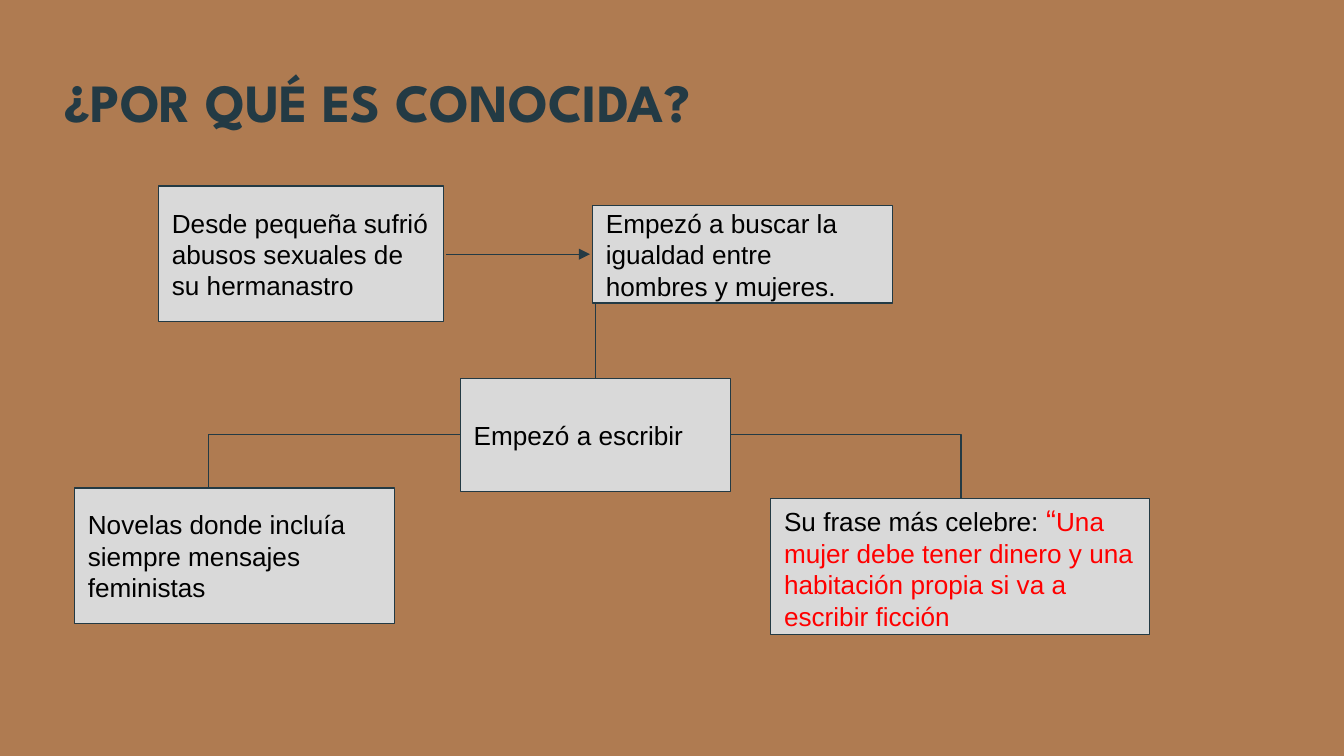
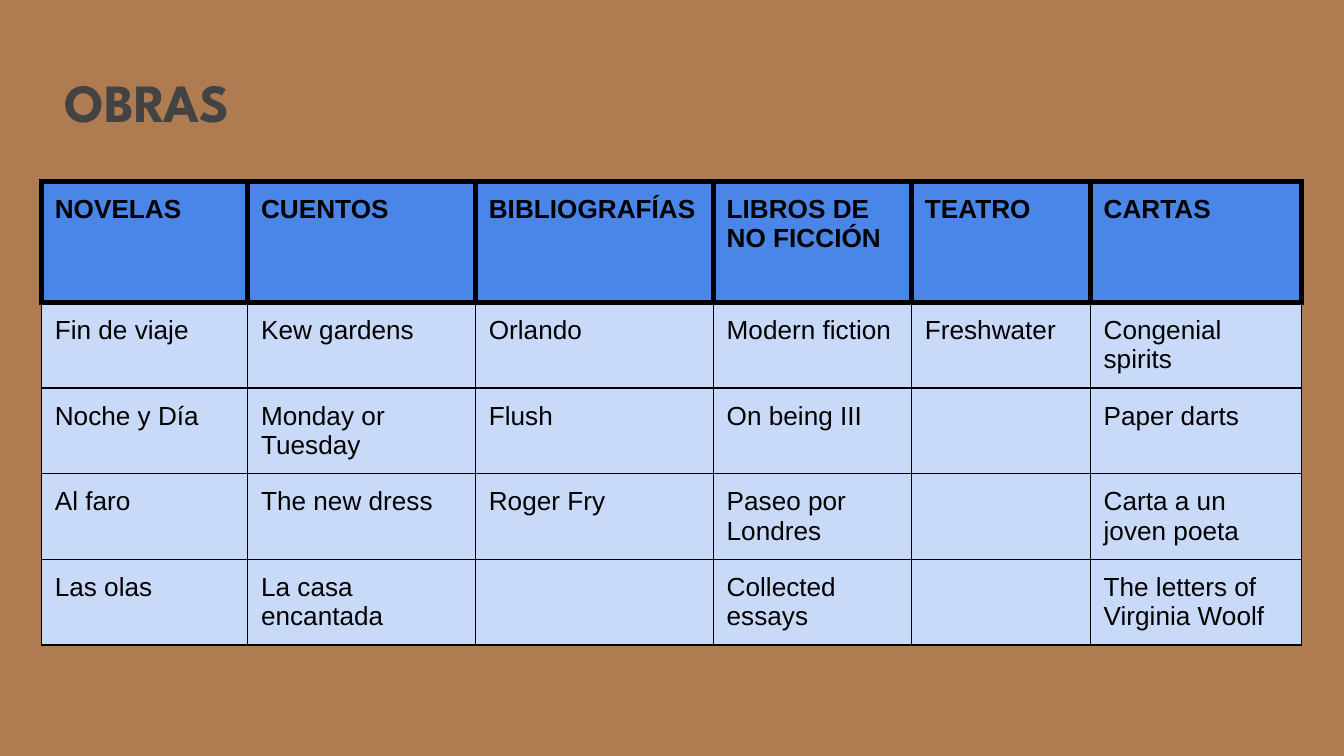
from dataclasses import dataclass
from typing import NamedTuple

from lxml import etree
from pptx import Presentation
from pptx.dml.color import RGBColor
from pptx.enum.shapes import MSO_CONNECTOR, MSO_SHAPE
from pptx.enum.text import MSO_ANCHOR, MSO_AUTO_SIZE, PP_ALIGN
from pptx.oxml.ns import qn
from pptx.util import Inches, Pt

RECTANGLE = MSO_SHAPE.RECTANGLE
STRAIGHT, ELBOW = MSO_CONNECTOR.STRAIGHT, MSO_CONNECTOR.ELBOW
MIDDLE, BOTTOM = MSO_ANCHOR.MIDDLE, MSO_ANCHOR.BOTTOM
LEFT = PP_ALIGN.LEFT
NO_AUTOFIT = MSO_AUTO_SIZE.NONE

WIDTH, HEIGHT = Inches(10), Inches(5.625)
COLUMN = WIDTH / 100
ROW = HEIGHT / 56.25
MARGIN = Inches(0.1)
TITLE_ONLY = 5
TITLE_FONT, BODY_FONT = "League Spartan", "Arial"
TITLE_SIZE, BODY_SIZE, QUOTE_SIZE = 28.8, 14, 16
THIN, THICK = 0.75, 3
COLORS = {
    "background": "AF7B51",
    "ink": "233A44",
    "gray": "434343",
    "box": "D9D9D9",
    "text": "000000",
    "quote": "FF0000",
    "header": "4A86E8",
    "cell": "C9DAF8",
}


class Area(NamedTuple):
    """A place on the grid, in columns and rows."""

    left: float
    top: float
    width: float
    height: float


class Phrase(NamedTuple):
    """A piece of text with its own colour and size."""

    text: str
    color: str = "text"
    size: float = BODY_SIZE


@dataclass(frozen=True)
class Box:
    """A box of the concept map."""

    area: Area
    phrases: tuple[Phrase, ...]


@dataclass(frozen=True)
class Link:
    """A line of the concept map; elbows run sideways, then down."""

    start: tuple[float, float]
    end: tuple[float, float]
    arrow: bool = False


BANDS = (Area(0, 0, 100, 56.25), Area(0, 51, 100, 5.25))
TITLE_AREA = Area(3.8, 3.65, 81, 7.3)
BOXES = (
    Box(Area(11.8, 13.85, 21.2, 10.1),
        (Phrase("Desde pequeña sufrió abusos sexuales de su hermanastro"),)),
    Box(Area(44.1, 15.3, 22.3, 7.25),
        (Phrase("Empezó a buscar la igualdad entre hombres y mujeres."),)),
    Box(Area(34.25, 28.15, 20.1, 8.45), (Phrase("Empezó a escribir"),)),
    Box(Area(57.35, 37.1, 28.2, 10.1),
        (Phrase("Su frase más celebre: "),
         Phrase("“", "quote", QUOTE_SIZE),
         Phrase("Una mujer debe tener dinero y una habitación propia si va a "
                "escribir ficción", "quote"))),
    Box(Area(5.55, 36.3, 23.8, 10.1),
        (Phrase("Novelas donde incluía siempre mensajes feministas"),)),
)
LINKS = (
    Link((33.2, 18.92), (43.9, 18.92), arrow=True),
    Link((53.1, 22.5), (44.3, 28.1)),
    Link((54.4, 32.35), (71.5, 37.1)),
    Link((34.3, 32.35), (15.5, 37.1)),
)
WORKS = (
    ("NOVELAS", "CUENTOS", "BIBLIOGRAFÍAS", "LIBROS DE NO FICCIÓN", "TEATRO", "CARTAS"),
    ("Fin de viaje", "Kew gardens", "Orlando", "Modern fiction", "Freshwater",
     "Congenial spirits"),
    ("Noche y Día", "Monday or Tuesday", "Flush", "On being III", "", "Paper darts"),
    ("Al faro", "The new dress", "Roger Fry", "Paseo por Londres", "",
     "Carta a un joven poeta"),
    ("Las olas", "La casa encantada", "", "Collected essays", "",
     "The letters of Virginia Woolf"),
)
WORKS_COLUMNS = (15.35, 16.95, 17.7, 14.75, 13.3, 15.75)
WORKS_ROWS = (9,) + (5.4,) * 4
WORKS_AREA = Area(3.08, 13.5, sum(WORKS_COLUMNS), sum(WORKS_ROWS))


def color(name: str) -> RGBColor:
    """Return a named colour of the palette."""
    return RGBColor.from_string(COLORS[name])


def columns(count: float) -> int:
    """Return the width of some grid columns."""
    return round(count * COLUMN)


def rows(count: float) -> int:
    """Return the height of some grid rows."""
    return round(count * ROW)


def place(area: Area) -> tuple[int, int, int, int]:
    """Turn a grid area into slide lengths."""
    return columns(area.left), rows(area.top), columns(area.width), rows(area.height)


def set_margins(target) -> None:
    """Give a text frame or a cell the common margins."""
    target.margin_left = target.margin_right = MARGIN
    target.margin_top = target.margin_bottom = MARGIN


def format_run(run, font: str, size: float, color_name: str, bold: bool = False) -> None:
    """Set the font of a run."""
    run.font.name = font
    run.font.size = Pt(size)
    run.font.bold = bold
    run.font.color.rgb = color(color_name)


def add_rectangle(slide, area: Area, fill_name: str):
    """Add a plain filled rectangle without a line."""
    shape = slide.shapes.add_shape(RECTANGLE, *place(area))
    shape.shadow.inherit = False
    shape.fill.solid()
    shape.fill.fore_color.rgb = color(fill_name)
    shape.line.fill.background()
    return shape


def add_master_bands(presentation, slide) -> None:
    """Draw the bands and move them to the back of the slide master."""
    tree = presentation.slide_master.shapes.element
    for index, area in enumerate(BANDS):
        band = add_rectangle(slide, area, "background").element
        band.nvSpPr.cNvPr.set("id", str(100 + index))
        tree.insert(2 + index, band)


def add_titled_slide(presentation, title: str, color_name: str):
    """Add a slide with its title in place."""
    slide = presentation.slides.add_slide(presentation.slide_layouts[TITLE_ONLY])
    shape = slide.shapes.title
    shape.left, shape.top, shape.width, shape.height = place(TITLE_AREA)
    frame = shape.text_frame
    frame.text = title
    frame.auto_size = NO_AUTOFIT
    frame.vertical_anchor = BOTTOM
    set_margins(frame)
    paragraph = frame.paragraphs[0]
    paragraph.alignment = LEFT
    format_run(paragraph.runs[0], TITLE_FONT, TITLE_SIZE, color_name, bold=True)
    return slide


def draw_box(slide, box: Box) -> None:
    """Draw a box of the concept map."""
    shape = add_rectangle(slide, box.area, "box")
    shape.line.color.rgb = color("ink")
    shape.line.width = Pt(THIN)
    frame = shape.text_frame
    frame.word_wrap = True
    frame.vertical_anchor = MIDDLE
    set_margins(frame)
    paragraph = frame.paragraphs[0]
    paragraph.alignment = LEFT
    paragraph.line_spacing = 1.0
    for phrase in box.phrases:
        run = paragraph.add_run()
        run.text = phrase.text
        format_run(run, BODY_FONT, phrase.size, phrase.color)


def draw_link(slide, link: Link) -> None:
    """Draw a straight or bent line between two grid points."""
    straight = link.start[1] == link.end[1]
    connector = slide.shapes.add_connector(
        STRAIGHT if straight else ELBOW,
        columns(link.start[0]), rows(link.start[1]),
        columns(link.end[0]), rows(link.end[1]))
    connector.line.color.rgb = color("ink")
    connector.line.width = Pt(THIN)
    properties = connector.element.spPr
    etree.SubElement(properties, qn("a:effectLst"))
    if link.arrow:
        etree.SubElement(properties.find(qn("a:ln")), qn("a:tailEnd"), type="triangle")
    if not straight:
        geometry = properties.find(qn("a:prstGeom"))
        adjustments = geometry.find(qn("a:avLst"))
        if adjustments is None:
            adjustments = etree.SubElement(geometry, qn("a:avLst"))
        etree.SubElement(adjustments, qn("a:gd"), name="adj1", fmla="val 100000")


def set_borders(cell, top: float, others: float) -> None:
    """Draw the four borders of a cell."""
    properties = cell._tc.get_or_add_tcPr()
    for side in "LRTB":
        width = top if side == "T" else others
        line = etree.SubElement(properties, qn(f"a:ln{side}"), w=str(Pt(width)))
        fill = etree.SubElement(line, qn("a:solidFill"))
        etree.SubElement(fill, qn("a:srgbClr"), val=COLORS["text"])


def draw_cell(cell, text: str, row_index: int) -> None:
    """Fill and format a cell of the table of works."""
    header = row_index == 0
    set_borders(cell, THICK if row_index < 2 else THIN, THICK if header else THIN)
    cell.fill.solid()
    cell.fill.fore_color.rgb = color("header" if header else "cell")
    set_margins(cell)
    if text:
        cell.text_frame.text = text
        run = cell.text_frame.paragraphs[0].runs[0]
        format_run(run, BODY_FONT, BODY_SIZE, "text", bold=header)


def draw_works(slide) -> None:
    """Draw the table of works."""
    table = slide.shapes.add_table(
        len(WORKS_ROWS), len(WORKS_COLUMNS), *place(WORKS_AREA)).table
    table.first_row = table.horz_banding = False
    for column, width in zip(table.columns, WORKS_COLUMNS):
        column.width = columns(width)
    for row_index, (row, height) in enumerate(zip(table.rows, WORKS_ROWS)):
        row.height = rows(height)
        for cell, text in zip(row.cells, WORKS[row_index]):
            draw_cell(cell, text, row_index)


def main() -> None:
    """Build and save the presentation."""
    presentation = Presentation()
    presentation.slide_width, presentation.slide_height = WIDTH, HEIGHT

    fame_slide = add_titled_slide(presentation, "¿POR QUÉ ES CONOCIDA?", "ink")
    add_master_bands(presentation, fame_slide)
    for link in LINKS:
        draw_link(fame_slide, link)
    for box in BOXES:
        draw_box(fame_slide, box)

    works_slide = add_titled_slide(presentation, "OBRAS", "gray")
    draw_works(works_slide)
    presentation.save("out.pptx")


if __name__ == "__main__":
    main()
